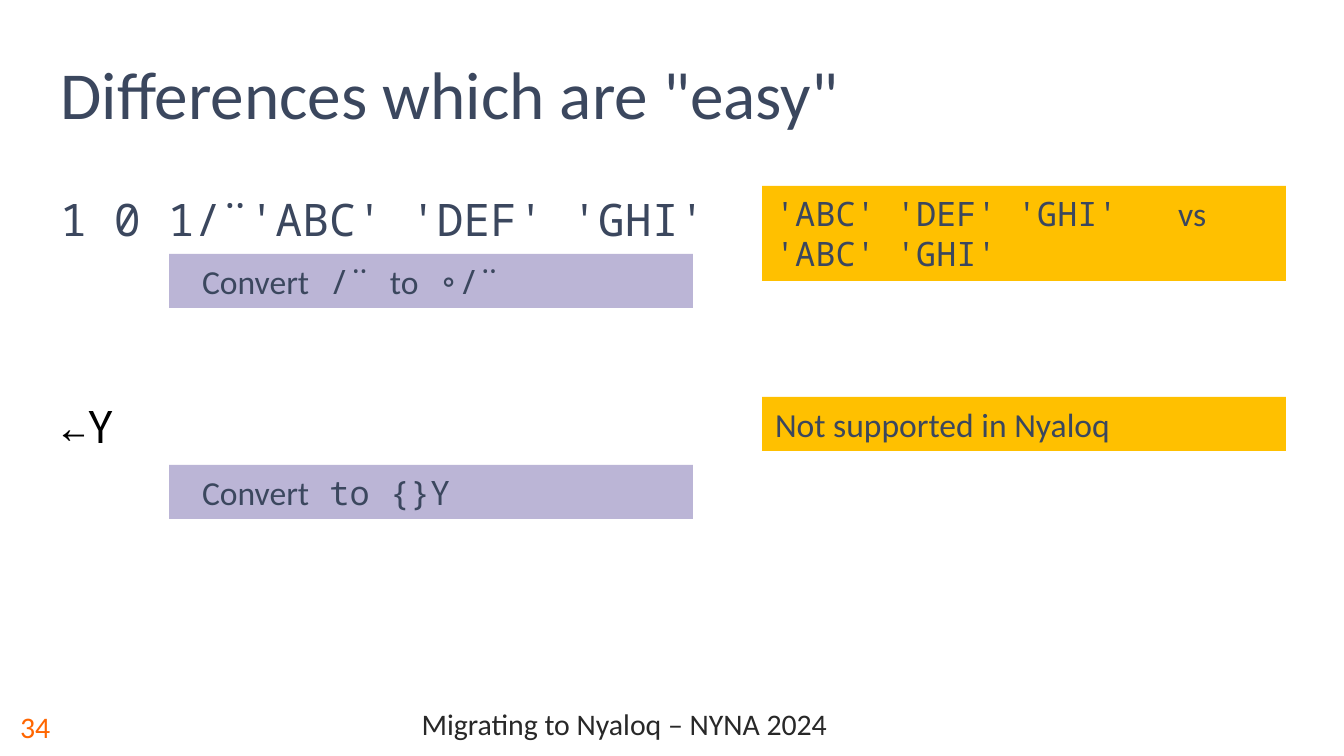
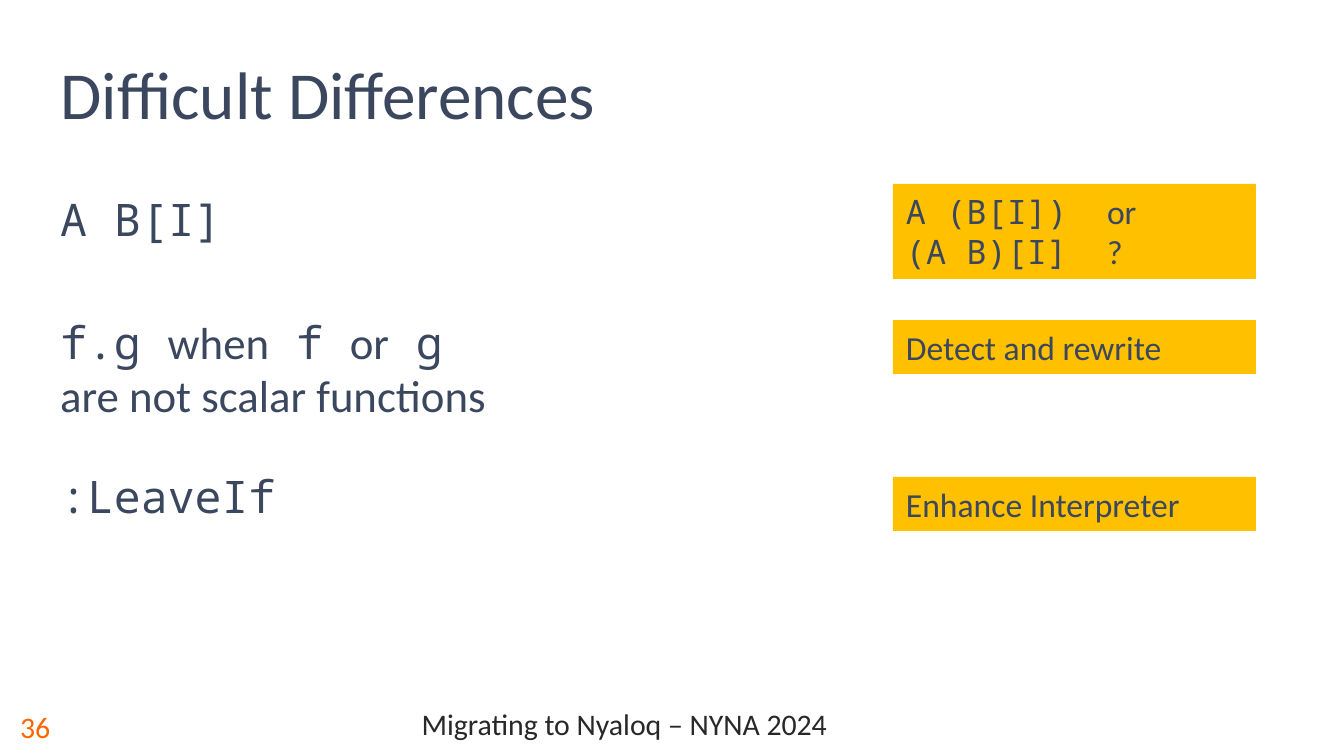
from lxml.etree import SubElement
from pptx import Presentation
from pptx.dml.color import RGBColor
from pptx.enum.shapes import MSO_SHAPE
from pptx.enum.text import MSO_ANCHOR as ANCHOR, MSO_AUTO_SIZE as AUTO, PP_ALIGN as ALIGN
from pptx.oxml.ns import qn
from pptx.util import Emu, Pt

EMU_PER_PX = 914400 / 134.4
SANS, MONO = "Calibri", "Noto Sans Mono"
COLORS = {
    "text": "3B475E", "black": "000000", "footer": "282828",
    "number": "FF6600", "note": "FFC000", "action": "BBB5D6",
}
FOOTER = "Migrating to Nyaloq – NYNA 2024"
TITLE_ONLY = 5


def px(n):
    return Emu(round(n * EMU_PER_PX))


def box(*lengths):
    return [px(n) for n in lengths]


def rgb(name):
    return RGBColor.from_string(COLORS[name])


def set_font(font, size, color, name=None):
    font.size = Pt(size)
    font.color.rgb = rgb(color)
    if name:
        font.name = name


def write(p, markup, size, color="text"):
    """Fill a paragraph; backticks enclose code, and a newline breaks the line."""
    parts = [(text, MONO if i % 2 else SANS)
             for i, text in enumerate(markup.split("`")) if text]
    fonts = {name for _, name in parts}
    set_font(p.font, size, color, fonts.pop() if len(fonts) == 1 else None)
    for text, name in parts:
        for i, line in enumerate(text.split("\n")):
            if i:
                p.add_line_break()
            if line:
                r = p.add_run()
                r.text = line
                if fonts:
                    r.font.name = name


def add_text(slide, bounds, anchor=ANCHOR.TOP):
    tf = slide.shapes.add_textbox(*box(*bounds)).text_frame
    tf.word_wrap = True
    tf.vertical_anchor = anchor
    return tf


def add_topics(slide, topics):
    """Stack (markup, space before in points, colour) down the left side."""
    tf = add_text(slide, (47, 185, 845, 477))
    for i, (markup, space, color) in enumerate(topics):
        p = tf.add_paragraph() if i else tf.paragraphs[0]
        if space:
            p.space_before = Pt(space)
        write(p, markup, 24, color)


def add_callout(slide, bounds, markup, fill="note", indent=13, tab=None):
    sp = slide.shapes.add_shape(MSO_SHAPE.RECTANGLE, *box(*bounds))
    sp.shadow.inherit = False
    sp.fill.solid()
    sp.fill.fore_color.rgb = rgb(fill)
    sp.line.fill.background()
    tf = sp.text_frame
    tf.word_wrap = True
    tf.auto_size = AUTO.SHAPE_TO_FIT_TEXT
    tf.vertical_anchor = ANCHOR.TOP
    tf.margin_left = px(indent)
    p = tf.paragraphs[0]
    p.alignment = ALIGN.LEFT
    if tab:
        tabs = SubElement(p._p.get_or_add_pPr(), qn("a:tabLst"))
        SubElement(tabs, qn("a:tab"), pos=str(px(tab)), algn="l")
    write(p, markup, 18)


def add_slide(prs, title, number):
    slide = prs.slides.add_slide(prs.slide_layouts[TITLE_ONLY])
    sp = slide.shapes.title
    sp.left, sp.top, sp.width, sp.height = box(47, 39, 1035, 101)
    tf = sp.text_frame
    tf.vertical_anchor = ANCHOR.BOTTOM
    p = tf.paragraphs[0]
    p.alignment = ALIGN.LEFT
    write(p, title, 36)

    p = add_text(slide, (105, 697, 1039, 59), ANCHOR.MIDDLE).paragraphs[0]
    p.alignment = ALIGN.CENTER
    p.line_spacing = 0.8
    write(p, FOOTER, 16, "footer")
    p = add_text(slide, (7, 697, 98, 59), ANCHOR.MIDDLE).paragraphs[0]
    write(p, str(number), 16, "number")
    return slide


def add_easy_differences(prs):
    slide = add_slide(prs, 'Differences which are "easy"', 34)
    add_topics(slide, [("`1 0 1/¨'ABC' 'DEF' 'GHI'`", 0, "text"),
                       ("`←Y`", 82, "black")])
    rows = [
        (186, 95, "`'ABC' 'DEF' 'GHI'\t`vs\n`'ABC' 'GHI'`", "Convert` /¨ `to` ∘/¨`"),
        (397, 54, "Not supported in Nyaloq", "Convert` to {}Y`"),
    ]
    for top, height, issue, action in rows:
        add_callout(slide, (762, top, 524, height), issue)
        add_callout(slide, (169, top + 68, 524, 54), action, "action", indent=33)


def add_difficult_differences(prs):
    slide = add_slide(prs, "Difficult Differences", 36)
    add_topics(slide, [
        ("`A B[I]`", 0, "text"),
        ("`f.g `when` f `or` g`\nare not scalar functions", 37, "text"),
        ("`:LeaveIf`", 25, "text"),
    ])
    notes = [
        (184, 95, "`A (B[I])\t`or\n`(A B)[I]\t`?", 201),
        (320, 54, "Detect and rewrite", None),
        (477, 54, "Enhance Interpreter", None),
    ]
    for top, height, note, tab in notes:
        add_callout(slide, (893, top, 363, height), note, tab=tab)


def main():
    prs = Presentation()
    prs.slide_width, prs.slide_height = box(1344, 756)
    add_easy_differences(prs)
    add_difficult_differences(prs)
    prs.save("out.pptx")


if __name__ == "__main__":
    main()
